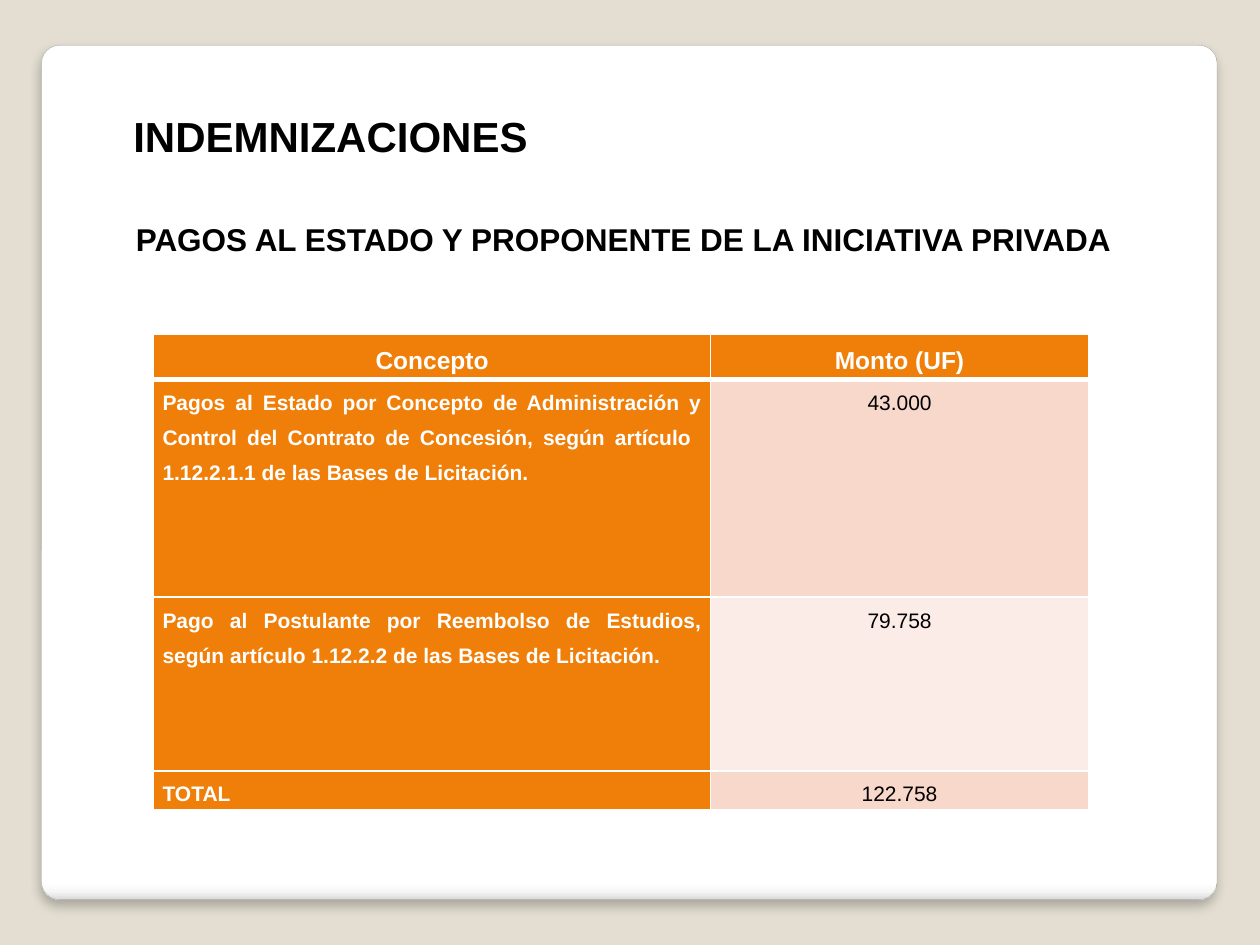
"""Build the slide on compensation payments with its table of amounts."""
from lxml.etree import SubElement
from pptx import Presentation
from pptx.dml.color import RGBColor
from pptx.enum.shapes import MSO_SHAPE as SHAPE
from pptx.enum.text import MSO_ANCHOR as ANCHOR, PP_ALIGN as ALIGN
from pptx.oxml.ns import qn
from pptx.util import Inches, Pt

FONT = "Arial"
BLACK = RGBColor(0x00, 0x00, 0x00)
WHITE = RGBColor(0xFF, 0xFF, 0xFF)
BEIGE = RGBColor(0xE3, 0xDE, 0xD1)
GRAY = RGBColor(0xA4, 0xA4, 0xA4)
ORANGE = RGBColor(0xF0, 0x7F, 0x09)
BANDS = [RGBColor(0xF9, 0xD8, 0xCC), RGBColor(0xFC, 0xEC, 0xE7)]
PANEL_STOPS = [(0, WHITE), (98, WHITE), (99, RGBColor(0xF7, 0xF7, 0xF7)),
               (100, RGBColor(0xDA, 0xDA, 0xDA))]

HEADINGS = [
    ("INDEMNIZACIONES", 24, 0, (0.96, 0.83, 8.03, 0.5)),
    ("PAGOS AL ESTADO Y PROPONENTE DE LA INICIATIVA PRIVADA", 18, 3.6,
     (0.98, 1.7, 8.71, 0.5)),
]
ROWS = [
    ("Concepto", "Monto (UF)"),
    ("Pagos al Estado por Concepto de Administración y Control del Contrato "
     "de Concesión, según artículo  1.12.2.1.1 de las Bases de Licitación.", "43.000"),
    ("Pago al Postulante por Reembolso de Estudios, según artículo 1.12.2.2 "
     "de las Bases de Licitación.", "79.758"),
    ("TOTAL", "122.758"),
]
COL_WIDTHS = [4.42, 3]
ROW_HEIGHTS = [0.36, 1.73, 1.38, 0.31]


def add_color(parent, color, alpha=None):
    clr = SubElement(parent, qn("a:srgbClr"), val=str(color))
    if alpha is not None:
        SubElement(clr, qn("a:alpha"), val=str(alpha * 1000))


def add_run(p, text, size, color, bold):
    r = p.add_run()
    r.text = text
    r.font.name, r.font.size, r.font.bold = FONT, Pt(size), bold
    r.font.color.rgb = color


def add_panel(s):
    sp = s.shapes.add_shape(SHAPE.ROUNDED_RECTANGLE, *map(Inches, (0.33, 0.36, 9.33, 6.78)))
    sp.adjustments[0] = 0.021
    sp.line.color.rgb, sp.line.width = GRAY, Pt(0.16)
    sp.fill.gradient()
    sp.fill.gradient_angle = 270
    props = sp.element.spPr
    stops = props.find(".//" + qn("a:gsLst"))
    for gs in list(stops):
        stops.remove(gs)
    for pos, color in PANEL_STOPS:
        add_color(SubElement(stops, qn("a:gs"), pos=str(pos * 1000)), color)
    sp.shadow.inherit = False
    shadow = SubElement(props.find(qn("a:effectLst")), qn("a:outerShdw"),
                        blurRad=str(Pt(6)), dist=str(Pt(4)), dir="5400000",
                        algn="t", rotWithShape="0")
    add_color(shadow, BLACK, 25)


def add_heading(s, text, size, before, box):
    tf = s.shapes.add_textbox(*map(Inches, box)).text_frame
    tf.word_wrap = True
    p = tf.paragraphs[0]
    p.alignment, p.space_before = ALIGN.JUSTIFY, Pt(before)
    add_run(p, text, size, BLACK, True)


def set_borders(cell, bottom):
    props = cell._tc.get_or_add_tcPr()
    for i, (side, width) in enumerate([("L", 1), ("R", 1), ("T", 1), ("B", bottom)]):
        ln = SubElement(props, qn("a:ln" + side), w=str(Pt(width)))
        add_color(SubElement(ln, qn("a:solidFill")), WHITE)
        props.remove(ln)
        props.insert(i, ln)


def fill_cell(cell, text, row, col):
    header, label = row == 0, row == 0 or col == 0
    cell.margin_left = cell.margin_right = Inches(0.07)
    cell.margin_top = cell.margin_bottom = 0
    cell.vertical_anchor = ANCHOR.TOP
    cell.fill.solid()
    cell.fill.fore_color.rgb = ORANGE if label else BANDS[(row - 1) % 2]
    set_borders(cell, 3 if header else 1)
    p = cell.text_frame.paragraphs[0]
    p.alignment = ALIGN.CENTER if header or col else ALIGN.JUSTIFY
    p.line_spacing, p.space_after = 1.5, Pt(10)
    add_run(p, text, 14 if header else 12, WHITE if label else BLACK, label)


def add_amounts(s):
    box = (1.22, 2.65, sum(COL_WIDTHS), sum(ROW_HEIGHTS))
    table = s.shapes.add_table(len(ROWS), len(COL_WIDTHS), *map(Inches, box)).table
    for column, width in zip(table.columns, COL_WIDTHS):
        column.width = Inches(width)
    for i, (height, texts) in enumerate(zip(ROW_HEIGHTS, ROWS)):
        table.rows[i].height = Inches(height)
        for j, text in enumerate(texts):
            fill_cell(table.cell(i, j), text, i, j)


def main():
    prs = Presentation()
    prs.slide_width, prs.slide_height = Inches(10), Inches(7.5)
    s = prs.slides.add_slide(prs.slide_layouts[6])
    s.background.fill.solid()
    s.background.fill.fore_color.rgb = BEIGE
    add_panel(s)
    for heading in HEADINGS:
        add_heading(s, *heading)
    add_amounts(s)
    prs.save("out.pptx")


if __name__ == "__main__":
    main()
